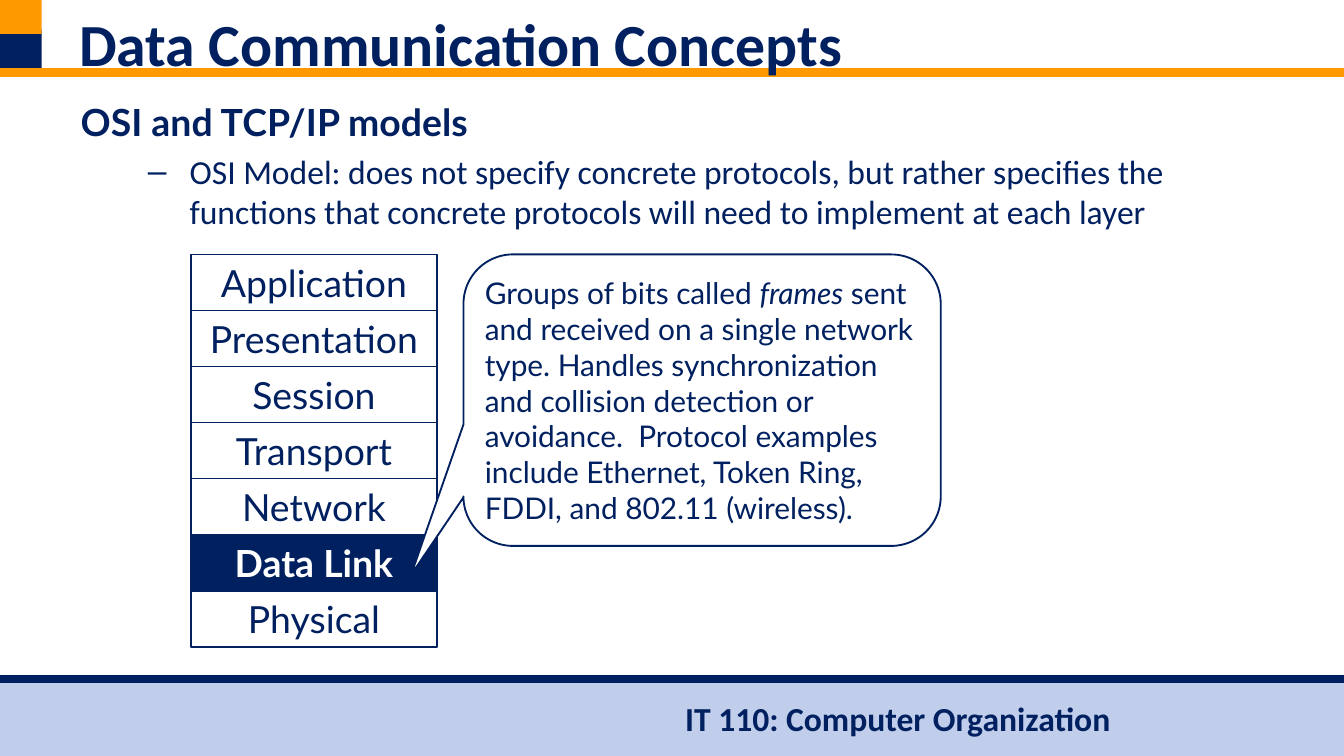
from typing import NamedTuple, Optional

from lxml.etree import SubElement
from pptx import Presentation
from pptx.dml.color import RGBColor
from pptx.enum.shapes import MSO_CONNECTOR, MSO_SHAPE
from pptx.enum.text import MSO_ANCHOR as ANCHOR, MSO_AUTO_SIZE, PP_ALIGN as ALIGN
from pptx.oxml.ns import qn
from pptx.util import Cm, Pt

NAVY = RGBColor(0x00, 0x20, 0x60)
ORANGE = RGBColor(0xFF, 0x99, 0x00)
PALE_BLUE = RGBColor(0xC0, 0xCD, 0xEB)
WHITE = RGBColor(0xFF, 0xFF, 0xFF)

WIDTH, HEIGHT = 25.4, 14.29
LAYERS = ["Application", "Presentation", "Session", "Transport",
          "Network", "Data Link", "Physical"]
ACTIVE_LAYER = "Data Link"
STACK_LEFT, STACK_TOP, LAYER_WIDTH, LAYER_HEIGHT = 3.61, 4.81, 4.65, 1.06


class Box(NamedTuple):
    """Position and size in centimetres."""
    left: float
    top: float
    width: float
    height: float

    def lengths(self) -> list:
        return [Cm(v) for v in self]


class Band(NamedTuple):
    box: Box
    color: RGBColor


class Rule(NamedTuple):
    y: float
    color: RGBColor


DECORATION = [
    Band(Box(0, 12.85, WIDTH, HEIGHT - 12.85), PALE_BLUE),
    Band(Box(0, 0.56, 0.79, 0.81), NAVY),
    Rule(1.37, ORANGE),
    Band(Box(0, 0, 0.79, 0.64), ORANGE),
    Rule(12.83, NAVY),
]


def add_text(p, text: str, *, size: float, font: str = "Calibri",
             color: RGBColor = NAVY, bold: bool = False, italic: bool = False):
    r = p.add_run()
    r.text = text
    f = r.font
    f.name, f.size, f.bold, f.italic = font, Pt(size), bold, italic
    f.color.rgb = color


def add_box(slide, kind, box: Box, fill: Optional[RGBColor] = None,
            line: Optional[RGBColor] = None, line_width: float = 0.75):
    s = slide.shapes.add_shape(kind, *box.lengths())
    s.shadow.inherit = False
    if fill is None:
        s.fill.background()
    else:
        s.fill.solid()
        s.fill.fore_color.rgb = fill
    if line is None:
        s.line.fill.background()
    else:
        s.line.color.rgb = line
        s.line.width = Pt(line_width)
    s.text_frame.word_wrap = True
    s.text_frame.vertical_anchor = ANCHOR.MIDDLE
    return s


def add_rule(slide, rule: Rule):
    c = slide.shapes.add_connector(MSO_CONNECTOR.STRAIGHT, 0, Cm(rule.y),
                                   Cm(WIDTH), Cm(rule.y))
    c.line.color.rgb = rule.color
    c.line.width = Pt(4.5)
    SubElement(c._element.spPr, qn("a:effectLst"))


def place(sp, box: Box):
    """Move a placeholder, bring it to the front and return its text frame."""
    sp.left, sp.top, sp.width, sp.height = box.lengths()
    sp._element.getparent().append(sp._element)
    tf = sp.text_frame
    tf.word_wrap = True
    tf.auto_size = MSO_AUTO_SIZE.NONE
    tf.vertical_anchor = ANCHOR.TOP
    return tf


def set_bullet(p, margin: float, indent: float, char: Optional[str] = None):
    pPr = p._p.get_or_add_pPr()
    pPr.set("marL", str(Cm(margin)))
    pPr.set("indent", str(Cm(indent)))
    if char:
        SubElement(pPr, qn("a:buChar")).set("char", char)
    else:
        SubElement(pPr, qn("a:buNone"))


def add_layer(slide, index: int, name: str):
    active = name == ACTIVE_LAYER
    box = Box(STACK_LEFT, STACK_TOP + index * LAYER_HEIGHT, LAYER_WIDTH, LAYER_HEIGHT)
    s = add_box(slide, MSO_SHAPE.RECTANGLE, box, NAVY if active else None, NAVY)
    p = s.text_frame.paragraphs[0]
    p.alignment = ALIGN.CENTER
    add_text(p, name, size=20, font="Lato", bold=active,
             color=WHITE if active else NAVY)


def add_callout(slide):
    s = add_box(slide, MSO_SHAPE.ROUNDED_RECTANGULAR_CALLOUT,
                Box(8.76, STACK_TOP, 9.02, 5.51), WHITE, NAVY, 1)
    for i, value in enumerate((-0.61, 0.6, 0.17)):
        s.adjustments[i] = value
    tf = s.text_frame
    tf.margin_left = tf.margin_right = Cm(0.13)
    p = tf.paragraphs[0]
    p.alignment = ALIGN.LEFT
    add_text(p, "Groups of bits called ", size=16, font="Lato")
    add_text(p, "frames", size=16, font="Lato", italic=True)
    add_text(p, " sent and received on a single network type. Handles "
             "synchronization and collision detection or avoidance.  Protocol "
             "examples include Ethernet, Token Ring, FDDI, and 802.11 (wireless).",
             size=16, font="Lato")


def main():
    prs = Presentation()
    prs.slide_width, prs.slide_height = Cm(WIDTH), Cm(HEIGHT)
    slide = prs.slides.add_slide(prs.slide_layouts[1])

    for item in DECORATION:
        if isinstance(item, Band):
            add_box(slide, MSO_SHAPE.RECTANGLE, item.box, item.color)
        else:
            add_rule(slide, item)

    footer = slide.shapes.add_textbox(*Box(12.7, 13.06, 8.61, 1.02).lengths())
    footer.text_frame.word_wrap = True
    add_text(footer.text_frame.paragraphs[0], "IT 110: Computer Organization",
             size=18, bold=True)

    body = place(slide.placeholders[1], Box(1.27, 1.75, 22.86, 9.42))
    heading = body.paragraphs[0]
    set_bullet(heading, 0.97, -0.97)
    heading.space_before = Pt(0)
    add_text(heading, "OSI and TCP/IP models", size=20, font="Lato", bold=True)
    point = body.add_paragraph()
    point.level = 1
    set_bullet(point, 2.06, -0.79, "–")
    point.space_before = Pt(3.6)
    add_text(point, "OSI Model: does not specify concrete protocols, but rather "
             "specifies the functions that concrete protocols will need to "
             "implement at each layer", size=18)

    title = place(slide.shapes.title, Box(1.24, 0, 22.91, 1.35)).paragraphs[0]
    title.alignment = ALIGN.LEFT
    add_text(title, "Data Communication Concepts", size=32, bold=True)

    for i, name in enumerate(LAYERS):
        add_layer(slide, i, name)
    add_callout(slide)
    prs.save("out.pptx")


if __name__ == "__main__":
    main()
